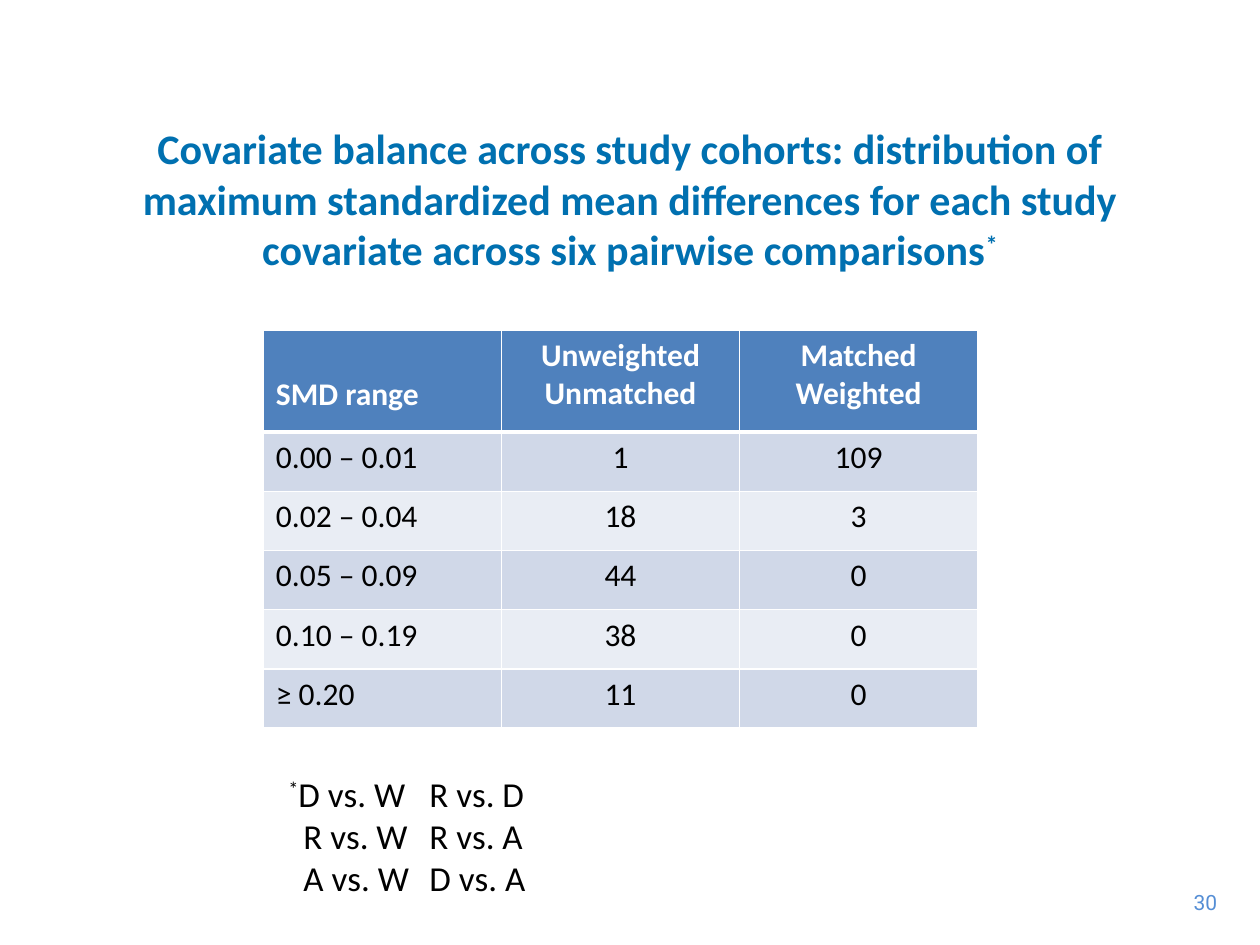
import pptx
import pptx.dml.color
import pptx.enum.text
import pptx.oxml
import pptx.oxml.ns
import pptx.util
from pptx.util import Inches

THEME = {
    "font": "Calibri", "number_font": "Roboto",
    "title": "0070B0", "number": "558ED5", "text": "000000", "white": "FFFFFF",
    "header": "4F81BD", "bands": ("D0D8E8", "E9EDF4"),
    "title_size": 24, "table_size": 18, "note_size": 20, "number_size": 12,
}
TITLE = ("Covariate balance across study cohorts: distribution of maximum "
         "standardized mean differences for each study covariate across six "
         "pairwise comparisons")
MARK = "*"
HEADER = ["SMD range", "Unweighted\nUnmatched", "Matched\nWeighted"]
ROWS = [
    ["0.00 – 0.01", "1", "109"],
    ["0.02 – 0.04", "18", "3"],
    ["0.05 – 0.09", "44", "0"],
    ["0.10 – 0.19", "38", "0"],
    ["≥ 0.20", "11", "0"],
]
COMPARISONS = [("D vs. W", "R vs. D"), ("R vs. W", "R vs. A"), ("A vs. W", "D vs. A")]
PAGE_NUMBER = "30"

COLUMN_WIDTH, HEADER_HEIGHT, ROW_HEIGHT = 1.89, 0.81, 0.47
CELL_MARGIN, HEADER_LINE = 0.05, 0.31
NOTE_INDENT, NOTE_TAB = 0.12, 1.12
THIN, THICK = 1, 3
ALIGN = pptx.enum.text.PP_ALIGN


def color(value):
    return pptx.dml.color.RGBColor.from_string(value)


def style(paragraph, size, value, bold=False, font=THEME["font"], align=ALIGN.LEFT):
    paragraph.alignment = align
    paragraph.font.name = font
    paragraph.font.size = pptx.util.Pt(size)
    paragraph.font.bold = bold
    paragraph.font.color.rgb = color(value)


def add_text(slide, left, top, width, height):
    frame = slide.shapes.add_textbox(*map(Inches, (left, top, width, height))).text_frame
    frame.word_wrap = True
    return frame


def add_run(paragraph, text, superscript=False):
    run = paragraph.add_run()
    run.text = text
    if superscript:
        run._r.get_or_add_rPr().set("baseline", "30000")


def add_borders(cell, top, bottom):
    properties = cell._tc.get_or_add_tcPr()
    for side, points in (("L", THIN), ("R", THIN), ("T", top), ("B", bottom)):
        properties.append(pptx.oxml.parse_xml(
            f'<a:ln{side} {pptx.oxml.ns.nsdecls("a")} w="{pptx.util.Pt(points)}">'
            f'<a:solidFill><a:srgbClr val="{THEME["white"]}"/></a:solidFill></a:ln{side}>'))


def add_title(slide):
    frame = add_text(slide, 0.5, 0.95, 9, 1.25)
    frame.vertical_anchor = pptx.enum.text.MSO_ANCHOR.MIDDLE
    paragraph = frame.paragraphs[0]
    add_run(paragraph, TITLE)
    add_run(paragraph, MARK, superscript=True)
    style(paragraph, THEME["title_size"], THEME["title"], bold=True, align=ALIGN.CENTER)


def add_balance_table(slide):
    rows = [HEADER] + ROWS
    heights = [HEADER_HEIGHT] + [ROW_HEIGHT] * len(ROWS)
    table = slide.shapes.add_table(
        len(rows), len(HEADER), Inches(2.09), Inches(2.62),
        Inches(COLUMN_WIDTH * len(HEADER)), Inches(sum(heights))).table
    for column in table.columns:
        column.width = Inches(COLUMN_WIDTH)
    for row_index, (values, height) in enumerate(zip(rows, heights)):
        table.rows[row_index].height = Inches(height)
        is_header = row_index == 0
        fill = THEME["header"] if is_header else THEME["bands"][(row_index - 1) % 2]
        for column_index, value in enumerate(values):
            cell = table.cell(row_index, column_index)
            cell.text = value
            add_borders(cell, THICK if row_index == 1 else THIN, THICK if is_header else THIN)
            cell.fill.solid()
            cell.fill.fore_color.rgb = color(fill)
            for paragraph in cell.text_frame.paragraphs:
                style(paragraph, THEME["table_size"],
                      THEME["white"] if is_header else THEME["text"], bold=is_header,
                      align=ALIGN.CENTER if column_index else ALIGN.LEFT)
    table.cell(0, 0).margin_top = Inches(CELL_MARGIN + HEADER_LINE)


def add_note(slide):
    frame = add_text(slide, 2.19, 6.08, 2.1, 1.11)
    for index, pair in enumerate(COMPARISONS):
        paragraph = frame.add_paragraph() if index else frame.paragraphs[0]
        properties = paragraph._p.get_or_add_pPr()
        properties.set("marL", str(Inches(NOTE_INDENT)))
        properties.set("indent", str(0 if index else -Inches(NOTE_INDENT)))
        properties.append(pptx.oxml.parse_xml(
            f'<a:tabLst {pptx.oxml.ns.nsdecls("a")}>'
            f'<a:tab pos="{Inches(NOTE_TAB)}" algn="l"/></a:tabLst>'))
        if index == 0:
            add_run(paragraph, MARK, superscript=True)
        add_run(paragraph, "\t".join(pair))
        style(paragraph, THEME["note_size"], THEME["text"])


def add_page_number(slide):
    frame = add_text(slide, 9.35, 7.01, 0.41, 0.3)
    frame.word_wrap = False
    paragraph = frame.paragraphs[0]
    add_run(paragraph, PAGE_NUMBER)
    style(paragraph, THEME["number_size"], THEME["number"],
          font=THEME["number_font"], align=ALIGN.RIGHT)


def main():
    presentation = pptx.Presentation()
    presentation.slide_width = Inches(10)
    presentation.slide_height = Inches(7.5)
    slide = presentation.slides.add_slide(presentation.slide_layouts[6])
    add_page_number(slide)
    add_title(slide)
    add_balance_table(slide)
    add_note(slide)
    presentation.save("out.pptx")


if __name__ == "__main__":
    main()
